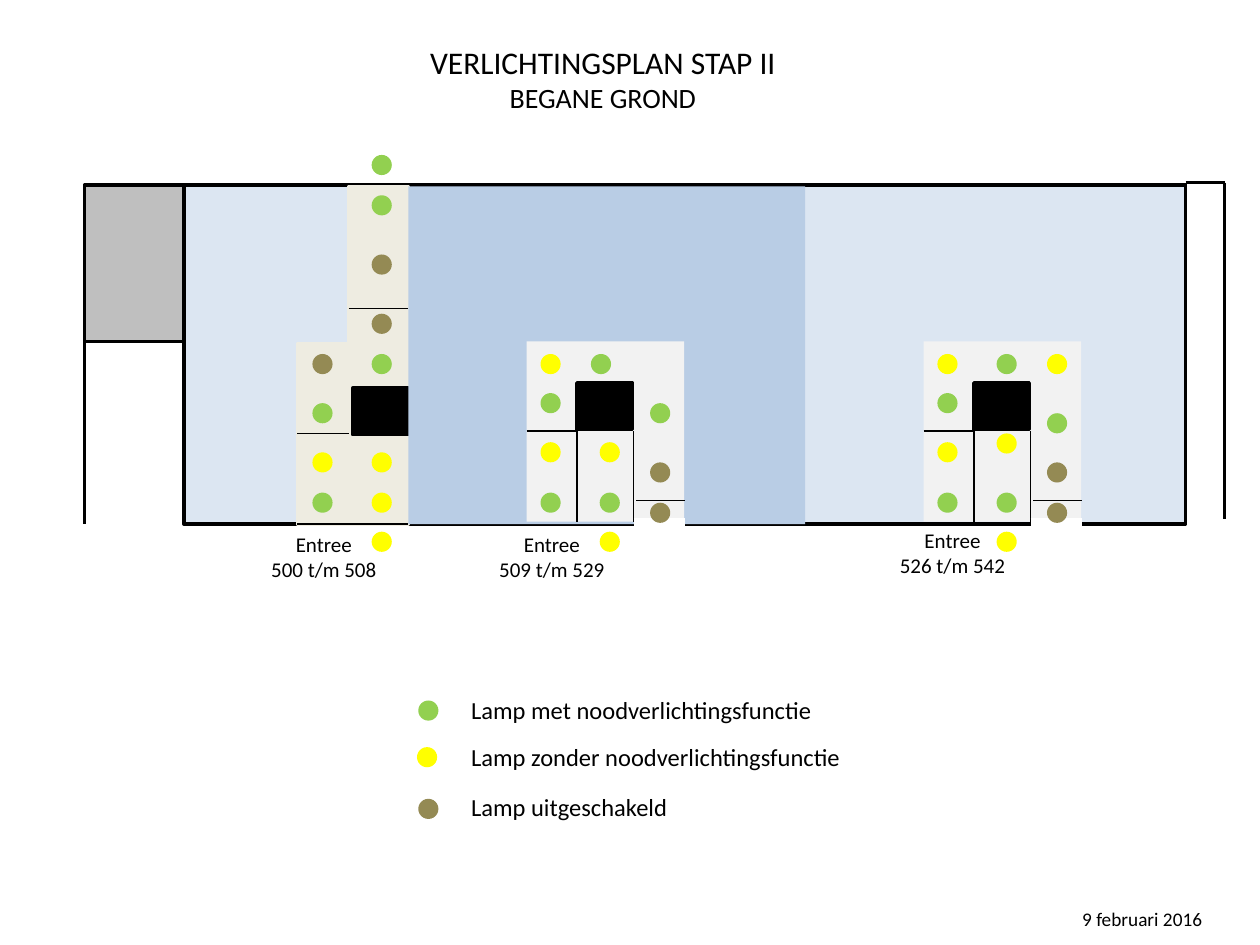
from lxml import etree
from pptx import Presentation
from pptx import util as u
from pptx.dml.color import RGBColor
from pptx.enum import shapes, text
from pptx.oxml.ns import qn

SCALE = 9144  # EMU per px, 100 px to the inch
FONT = "Calibri"
HEX = {
    "black": "000000", "white": "FFFFFF", "grey": "BFBFBF", "pale": "F2F2F2",
    "sand": "EEECE1", "light": "DCE6F2", "blue": "B9CDE5",
    "green": "92D050", "yellow": "FFFF00", "brown": "948A54",
}


def px(n):
    return u.Emu(n * SCALE)


def rgb(name):
    return RGBColor.from_string(HEX[name])


class Plan:
    lamp_size = 16

    def __init__(self, slide):
        self.items = slide.shapes

    def shape(self, kind, x, y, w, h, fill, edge=None):
        s = self.items.add_shape(kind, px(x), px(y), px(w), px(h))
        s.shadow.inherit = False
        s.fill.solid()
        s.fill.fore_color.rgb = rgb(fill)
        if edge:
            s.line.color.rgb = rgb(edge)
            s.line.width = u.Pt(2)
        else:
            s.line.fill.background()

    def room(self, x, y, w, h, fill, edge=None):
        self.shape(shapes.MSO_SHAPE.RECTANGLE, x, y, w, h, fill, edge)

    def lamp(self, x, y, fill):
        size = self.lamp_size
        self.shape(shapes.MSO_SHAPE.OVAL, x, y, size, size, fill)

    def lamps(self, left, cols):
        """Lamps by column: offset from left, then (top, colour) pairs."""
        for dx, spots in cols.items():
            for y, fill in spots:
                self.lamp(left + dx, y, fill)

    def wall(self, x1, y1, x2, y2, width=0.75, color="black"):
        c = self.items.add_connector(
            shapes.MSO_CONNECTOR.STRAIGHT, px(x1), px(y1), px(x2), px(y2))
        c.line.color.rgb = rgb(color)
        c.line.width = u.Pt(width)
        etree.SubElement(c._element.spPr, qn("a:effectLst"))

    def label(self, x, y, w, h, rows, center=False):
        """Rows are (words, point size) pairs, one paragraph each."""
        frame = self.items.add_textbox(px(x), px(y), px(w), px(h)).text_frame
        frame.word_wrap = True
        frame.auto_size = text.MSO_AUTO_SIZE.SHAPE_TO_FIT_TEXT
        for i, (words, size) in enumerate(rows):
            p = frame.add_paragraph() if i else frame.paragraphs[0]
            if center:
                p.alignment = text.PP_ALIGN.CENTER
            r = p.add_run()
            r.text = words
            r.font.name = FONT
            r.font.size = u.Pt(size)
            r.font.color.rgb = rgb("black")

    def hall(self, x):
        """Entrance hall with lift shaft and inner walls."""
        self.room(x, 271, 125, 143, "pale")
        self.room(x + 40, 304, 44, 37, "black", "black")
        for dx in (85, 40):
            self.wall(x + dx, 342, x + dx, 414)
        self.wall(x + 87, 397, x + 126, 397)
        self.wall(x, 342, x + 40, 342)
        self.wall(x + 85, 414, x + 126, 414, 4.5, "white")


def main():
    deck = Presentation()
    deck.slide_width, deck.slide_height = px(1000), px(750)
    plan = Plan(deck.slides.add_slide(deck.slide_layouts[6]))

    # Title and date
    plan.label(221, 29, 515, 67,
               [("VERLICHTINGSPLAN STAP II", 18), ("BEGANE GROND", 16)], True)
    plan.label(849, 715, 141, 29, [("9 februari 2016", 11)])

    # Legend
    for x, y, top, fill, words in (
        (332, 556, 547, "green", "Lamp met noodverlichtingsfunctie"),
        (331, 593, 584, "yellow", "Lamp zonder noodverlichtingsfunctie"),
        (332, 634, 624, "brown", "Lamp uitgeschakeld"),
    ):
        plan.lamp(x, y, fill)
        plan.label(364, top, 336, 34, [(words, 14)])

    # Building and first entrance
    plan.room(146, 147, 795, 269, "light", "black")
    plan.room(236, 273, 88, 143, "sand", "sand")
    plan.room(277, 148, 47, 124, "sand", "sand")
    plan.room(280, 308, 44, 37, "black", "black")
    for x1, x2, y in ((236, 277, 344), (277, 324, 245), (236, 324, 416)):
        plan.wall(x1, y, x2, y)

    # Middle block and the two equal halls
    plan.room(324, 148, 315, 268, "blue")
    halls = (418, 733)
    for x in halls:
        plan.hall(x)

    # Outer parts
    plan.room(67, 147, 79, 124, "grey", "black")
    plan.wall(67, 271, 67, 416, 1.5)
    plan.wall(941, 145, 972, 145, 1.5)
    plan.wall(972, 145, 972, 412, 1.5)

    # Entrance names
    for x, y, span in ((174, 417, "500 t/m 508"), (355, 417, "509 t/m 529"),
                       (673, 414, "526 t/m 542")):
        plan.label(x, y, 166, 50, [("Entree", 12), (span, 12)], True)

    # Lamps of the first entrance
    plan.lamps(236, {
        12: [(281, "brown"), (320, "green"), (359, "yellow"), (391, "green")],
        59: [(123, "green"), (155, "green"), (202, "brown"), (249, "brown"),
             (281, "green"), (359, "yellow"), (391, "yellow"),
             (422, "yellow")],
    })

    # Lamps that both halls share
    for x in halls:
        plan.lamps(x, {
            11: [(281, "yellow"), (312, "green"), (351, "yellow"),
                 (391, "green")],
            58: [(391, "green"), (422, "yellow")],
            98: [(367, "brown"), (399, "brown")],
        })

    # Lamps that differ
    mid, right = halls
    plan.lamps(mid, {51: [(281, "green")], 58: [(351, "yellow")],
                     98: [(320, "green")]})
    plan.lamps(right, {58: [(281, "green"), (344, "yellow")],
                       98: [(281, "yellow"), (328, "green")]})

    deck.save("out.pptx")


if __name__ == "__main__":
    main()
